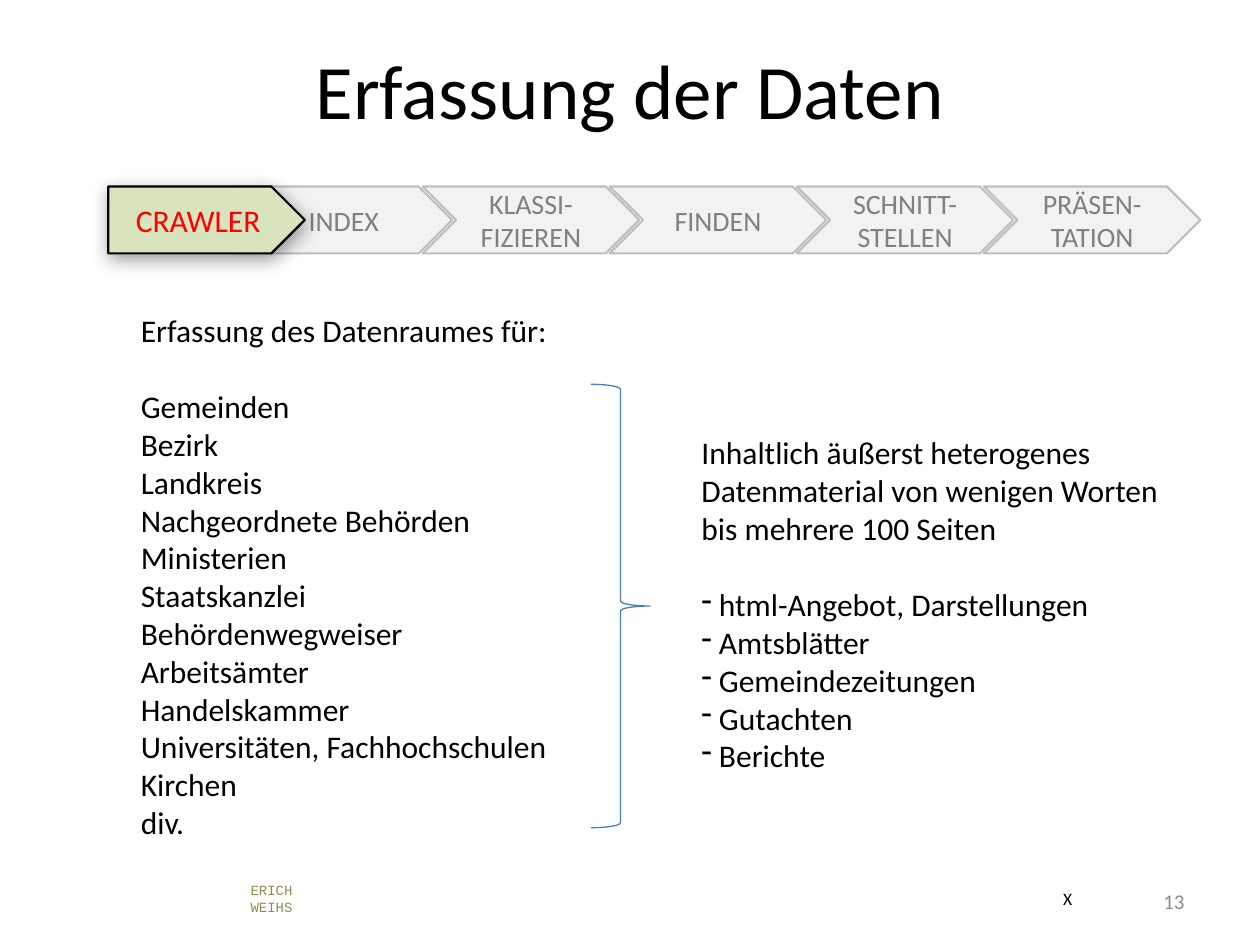
"""Build the slide on data collection, with its process chain and source lists."""
from lxml import etree
from pptx import Presentation
from pptx.dml.color import RGBColor
from pptx.enum.shapes import MSO_SHAPE
from pptx.enum.text import MSO_ANCHOR, MSO_AUTO_SIZE, PP_ALIGN
from pptx.oxml.ns import qn
from pptx.util import Pt

CHEVRON, PENTAGON, BRACE = MSO_SHAPE.CHEVRON, MSO_SHAPE.PENTAGON, MSO_SHAPE.RIGHT_BRACE
MIDDLE, TOP = MSO_ANCHOR.MIDDLE, MSO_ANCHOR.TOP
LEFT, CENTER, RIGHT = PP_ALIGN.LEFT, PP_ALIGN.CENTER, PP_ALIGN.RIGHT
GROW = MSO_AUTO_SIZE.SHAPE_TO_FIT_TEXT

BLACK = RGBColor(0x00, 0x00, 0x00)
RED = RGBColor(0xFF, 0x00, 0x00)
GREEN = RGBColor(0xD7, 0xE4, 0xBD)
BLUE = RGBColor(0x4B, 0x7E, 0xBC)
OLIVE = RGBColor(0x94, 0x8A, 0x54)
PALE = RGBColor(0xF2, 0xF2, 0xF2)
SILVER = RGBColor(0xBF, 0xBF, 0xBF)
GREY = RGBColor(0x80, 0x80, 0x80)
NUMBER_GREY = RGBColor(0x8C, 0x8C, 0x8C)

BODY_SIZE = 18
LINE_GAP = 22
DASH_INDENT = 10
STEP_TOP, STEP_HEIGHT = 106.6, 38.2
STEP_LEFT, STEP_WIDTH, STEP_PITCH = 134.6, 123.8, 106.9

STEPS = ["INDEX", "KLASSI-FIZIEREN", "FINDEN", "SCHNITT-STELLEN", "PRÄSEN-TATION"]
SOURCES = [
    "Gemeinden", "Bezirk", "Landkreis", "Nachgeordnete Behörden", "Ministerien",
    "Staatskanzlei", "Behördenwegweiser", "Arbeitsämter", "Handelskammer",
    "Universitäten, Fachhochschulen", "Kirchen", "div.",
]
MATERIAL = [
    "Inhaltlich äußerst heterogenes", "Datenmaterial von wenigen Worten",
    "bis mehrere 100 Seiten",
]
DOCUMENTS = [
    "html-Angebot, Darstellungen", "Amtsblätter", "Gemeindezeitungen",
    "Gutachten", "Berichte",
]


def add_dash(para):
    """Give a paragraph a hanging dash as its bullet."""
    properties = para._p.get_or_add_pPr()
    properties.set("marL", str(Pt(DASH_INDENT)))
    properties.set("indent", str(-Pt(DASH_INDENT)))
    etree.SubElement(properties, qn("a:buChar")).set("char", "-")


def write_lines(frame, lines, size, color, font="Calibri", align=LEFT, dashed=False, gap=0):
    """Add one paragraph per line, with a gap above the first line."""
    for index, line in enumerate(lines):
        used = frame.paragraphs[-1].runs
        para = frame.add_paragraph() if used else frame.paragraphs[0]
        para.alignment = align
        if gap and index == 0:
            para.space_before = Pt(gap)
        if dashed:
            add_dash(para)
        span = para.add_run()
        span.text = line
        span.font.size = Pt(size)
        span.font.name = font
        span.font.color.rgb = color


def add_text_box(page, left, top, width, height, anchor=TOP, wrap=True, grow=False):
    """Add an empty text box and return its text frame."""
    box = page.shapes.add_textbox(Pt(left), Pt(top), Pt(width), Pt(height))
    frame = box.text_frame
    frame.word_wrap = wrap
    frame.vertical_anchor = anchor
    if grow:
        frame.auto_size = GROW
    return frame


def add_step(page, kind, left, width, label, size, fill, line, color):
    """Add one labelled arrow of the process chain."""
    step = page.shapes.add_shape(kind, Pt(left), Pt(STEP_TOP), Pt(width), Pt(STEP_HEIGHT))
    step.shadow.inherit = False
    step.fill.solid()
    step.fill.fore_color.rgb = fill
    step.line.color.rgb = line
    step.line.width = Pt(1.25)
    step.text_frame.word_wrap = True
    step.text_frame.vertical_anchor = MIDDLE
    write_lines(step.text_frame, [label], size, color, align=CENTER)
    return step


def add_soft_shadow(shape):
    """Put a blurred black shadow just below a shape."""
    effects = shape._element.spPr.find(qn("a:effectLst"))
    shadow = etree.SubElement(effects, qn("a:outerShdw"))
    shadow.set("blurRad", str(Pt(11)))
    shadow.set("dist", str(Pt(3)))
    shadow.set("dir", str(77 * 60000))
    shadow.set("rotWithShape", "0")
    color = etree.SubElement(shadow, qn("a:srgbClr"))
    color.set("val", str(BLACK))
    etree.SubElement(color, qn("a:alpha")).set("val", "40000")


def add_chain(page):
    """Add the process chain with its first step highlighted."""
    for index, label in enumerate(STEPS):
        left = STEP_LEFT + index * STEP_PITCH
        add_step(page, CHEVRON, left, STEP_WIDTH, label, 16, PALE, SILVER, GREY)
    crawler = add_step(page, PENTAGON, 61.9, 112.3, "CRAWLER", 18, GREEN, BLACK, RED)
    add_soft_shadow(crawler)


def add_brace(page):
    """Add the brace that joins the two lists."""
    brace = page.shapes.add_shape(BRACE, Pt(337.7), Pt(219.6), Pt(33.8), Pt(253.4))
    brace.shadow.inherit = False
    brace.fill.background()
    brace.line.color.rgb = BLUE
    brace.line.width = Pt(0.75)


def add_lists(page):
    """Add the data sources, the brace and the kinds of material."""
    sources = add_text_box(page, 73.4, 174.2, 249.1, 312.5, wrap=False, grow=True)
    write_lines(sources, ["Erfassung des Datenraumes für:"], BODY_SIZE, BLACK)
    write_lines(sources, SOURCES, BODY_SIZE, BLACK, gap=LINE_GAP)
    add_brace(page)
    material = add_text_box(page, 393.8, 244.1, 283, 203.8, wrap=False, grow=True)
    write_lines(material, MATERIAL, BODY_SIZE, BLACK)
    write_lines(material, DOCUMENTS, BODY_SIZE, BLACK, dashed=True, gap=LINE_GAP)


def add_footer(page):
    """Add the author, the mark and the page number."""
    author = add_text_box(page, 136.1, 500.4, 38.9, 26.6, wrap=False, grow=True)
    write_lines(author, ["ERICH", "WEIHS"], 8, OLIVE, font="Courier New")
    number = add_text_box(page, 516.2, 500.4, 167.8, 28.8, anchor=MIDDLE)
    write_lines(number, ["13"], 12, NUMBER_GREY, align=RIGHT)
    mark = add_text_box(page, 600.5, 504, 23.8, 19.4, grow=True)
    write_lines(mark, ["X"], 10, BLACK)


def main():
    """Build and save the deck."""
    deck = Presentation()
    deck.slide_width, deck.slide_height = Pt(720), Pt(540)
    page = deck.slides.add_slide(deck.slide_layouts[6])
    title = add_text_box(page, 36, 5.8, 648, 90, anchor=MIDDLE)
    write_lines(title, ["Erfassung der Daten"], 44, BLACK, align=CENTER)
    add_chain(page)
    add_lists(page)
    add_footer(page)
    deck.save("out.pptx")


if __name__ == "__main__":
    main()
